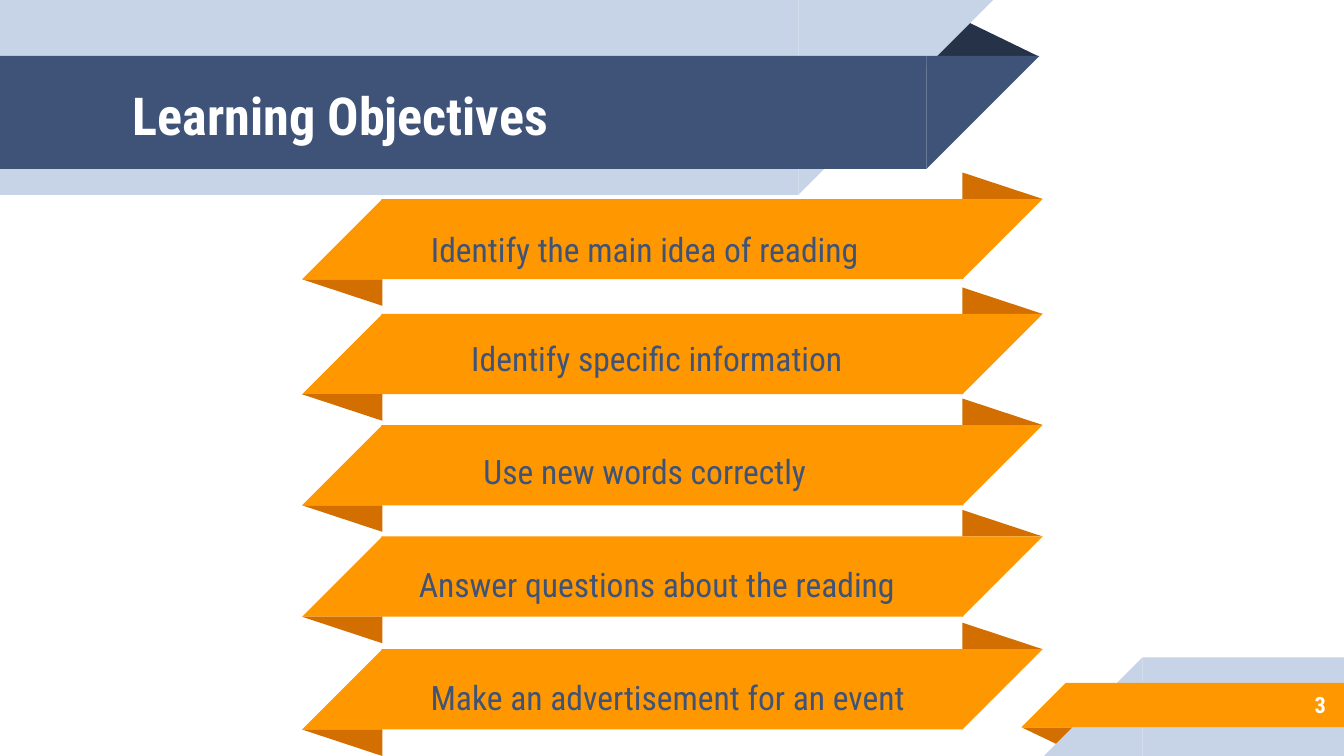
"""Build the learning objectives slide with its folded ribbons."""
from typing import NamedTuple

from pptx import Presentation
from pptx.dml.color import RGBColor
from pptx.enum import shapes, text
from pptx.util import Pt

NAVY = RGBColor(0x3F, 0x53, 0x78)
DARK = RGBColor(0x26, 0x32, 0x48)
PALE = RGBColor(0xC7, 0xD3, 0xE6)
GOLD = RGBColor(0xFF, 0x98, 0x00)
RUST = RGBColor(0xD2, 0x6F, 0x00)
WHITE = RGBColor(0xFF, 0xFF, 0xFF)
FONT = "Roboto Condensed"
RECT = shapes.MSO_SHAPE.RECTANGLE
WEDGE = shapes.MSO_SHAPE.RIGHT_TRIANGLE
FOLD = shapes.MSO_SHAPE.ISOSCELES_TRIANGLE
TOP_LEFT, LOW_RIGHT = 90, 270
LEFT, MID, RIGHT = text.PP_ALIGN.LEFT, text.PP_ALIGN.CENTER, text.PP_ALIGN.RIGHT


class Box(NamedTuple):
    x: float
    y: float
    w: float
    h: float


class Part(NamedTuple):
    kind: shapes.MSO_SHAPE
    box: Box
    fill: RGBColor
    turn: float = 0
    peak: float | None = None


class Style(NamedTuple):
    size: float
    color: RGBColor
    align: text.PP_ALIGN
    bold: bool = False
    before: float = 0
    after: float = 0


class Goal(NamedTuple):
    words: str
    top: float
    box: Box


HEAD = Style(28, WHITE, LEFT, bold=True)
PAGE = Style(12, WHITE, RIGHT, bold=True)
ITEM = Style(18, NAVY, MID, before=6, after=10)

HEADER = [
    Part(FOLD, Box(495.4, 10.1, 61.2, 20.2), DARK, peak=0.32),
    Part(RECT, Box(0, 0, 427.7, 104.4), PALE),
    Part(WEDGE, Box(427.7, 0, 104.4, 104.4), PALE, TOP_LEFT),
    Part(RECT, Box(0, 30, 496.3, 60.5), NAVY),
    Part(WEDGE, Box(496.3, 30, 60.5, 60.5), NAVY, TOP_LEFT),
]
FOOTER = [
    Part(FOLD, Box(547.2, 389.6, 31, 10.1), RUST, 180, 0.32),
    Part(RECT, Box(612, 352.2, 108, 52.8), PALE),
    Part(WEDGE, Box(559.2, 352.2, 52.8, 52.8), PALE, LOW_RIGHT),
    Part(RECT, Box(571, 365.8, 149, 23.8), GOLD),
    Part(WEDGE, Box(547.2, 365.8, 23.8, 23.8), GOLD, LOW_RIGHT),
]
GOALS = [
    Goal("Identify the main idea of reading", 106.6, Box(191.5, 115.2, 308, 36.7)),
    Goal("Identify specific information", 168.2, Box(198, 175.7, 308, 32.4)),
    Goal("Use new words correctly", 227.7, Box(191.5, 236.2, 308, 32.4)),
    Goal("Answer questions about the reading", 287.4, Box(198, 296.7, 308, 32.4)),
    Goal("Make an advertisement for an event", 347.8, Box(203.8, 357.2, 308, 32.4)),
]


def place(shape, box: Box) -> None:
    """Move and size a shape."""
    shape.left, shape.top, shape.width, shape.height = map(Pt, box)


def draw(tree, part: Part) -> None:
    """Draw one flat part of a ribbon."""
    shape = tree.add_shape(part.kind, *map(Pt, part.box))
    shape.shadow.inherit = False
    shape.fill.solid()
    shape.fill.fore_color.rgb = part.fill
    shape.line.fill.background()
    shape.rotation = part.turn
    if part.peak is not None:
        shape.adjustments[0] = part.peak


def ribbon(top: float) -> list[Part]:
    """Give the parts of a ribbon folded at both ends."""
    left, right, side, fold = 161.8, 515.6, 43, 14.2
    start = left + side
    return [
        Part(FOLD, Box(right, top - fold, side, fold), RUST, peak=0),
        Part(RECT, Box(start - 0.5, top, right - start + 1, side), GOLD),
        Part(WEDGE, Box(right, top, side, side), GOLD, TOP_LEFT),
        Part(WEDGE, Box(left, top, side, side), GOLD, LOW_RIGHT),
        Part(FOLD, Box(left, top + side, side, fold), RUST, 180, 0),
    ]


def write(shape, words: str, style: Style) -> None:
    """Set the text of a shape in a style."""
    frame = shape.text_frame
    frame.word_wrap = True
    frame.auto_size = text.MSO_AUTO_SIZE.NONE
    frame.vertical_anchor = text.MSO_ANCHOR.MIDDLE
    frame.margin_left = frame.margin_right = Pt(7.2)
    frame.margin_top = frame.margin_bottom = Pt(7.2)
    para = frame.paragraphs[0]
    para.alignment = style.align
    para.space_before, para.space_after = Pt(style.before), Pt(style.after)
    run = para.add_run()
    run.text = words
    run.font.name = FONT
    run.font.size = Pt(style.size)
    run.font.bold = style.bold
    run.font.color.rgb = style.color


def label(tree, box: Box, words: str, style: Style) -> None:
    """Add a text box."""
    write(tree.add_textbox(*map(Pt, box)), words, style)


def main() -> None:
    """Build and save the slide."""
    deck = Presentation()
    deck.slide_width, deck.slide_height = Pt(720), Pt(405)
    slide = deck.slides.add_slide(deck.slide_layouts[5])
    tree = slide.shapes
    for part in HEADER + FOOTER:
        draw(tree, part)
    for goal in GOALS:
        for part in ribbon(goal.top):
            draw(tree, part)
        label(tree, goal.box, goal.words, ITEM)
    label(tree, Box(600, 365, 117.4, 25.2), "3", PAGE)
    title = tree.title
    place(title, Box(64, 30.9, 268, 60.5))
    write(title, "Learning Objectives", HEAD)
    title.element.getparent().append(title.element)
    deck.save("out.pptx")


if __name__ == "__main__":
    main()
